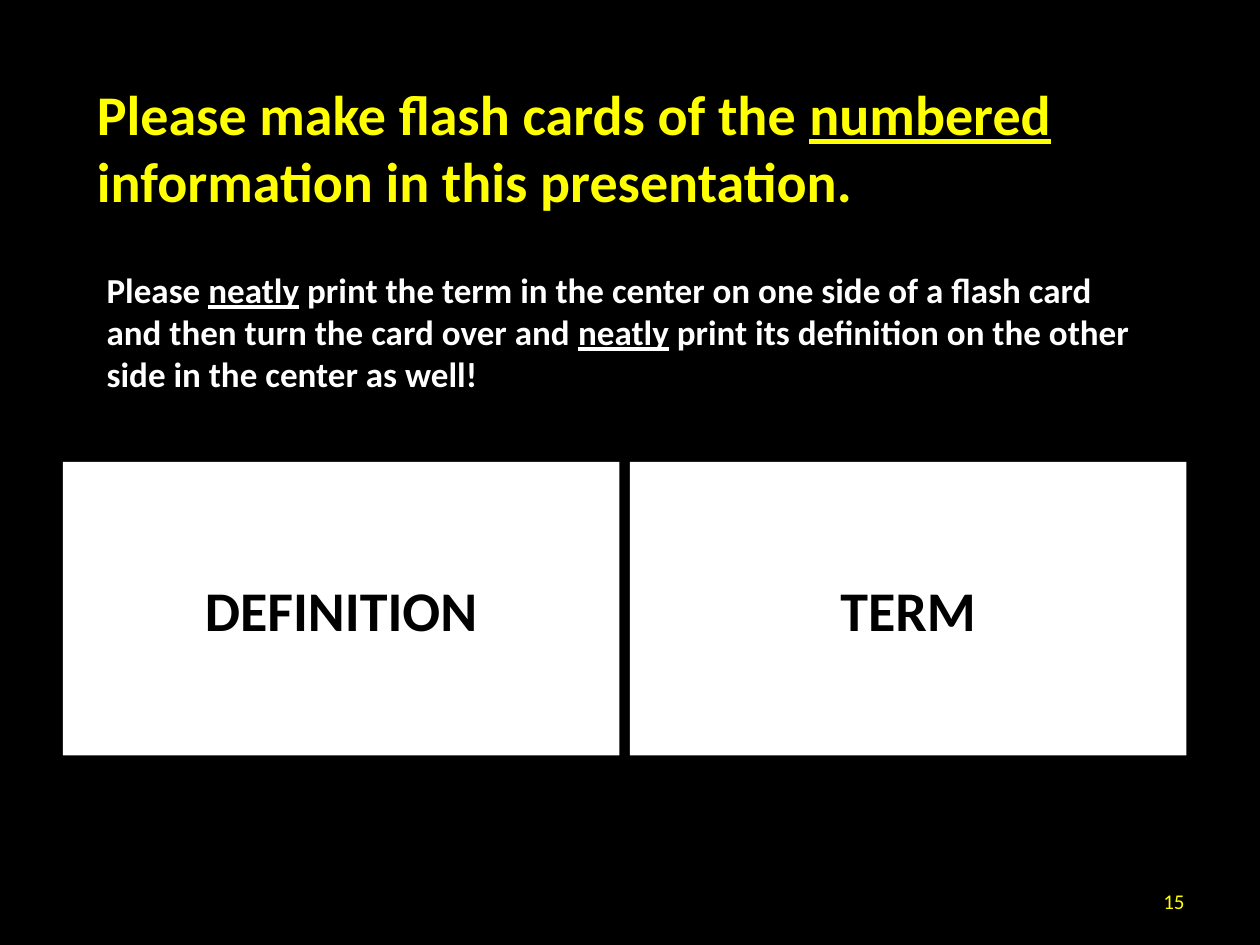
import pptx
import pptx.util
import pptx.dml.color
import pptx.enum.shapes
import pptx.enum.text

Cm, Pt = pptx.util.Cm, pptx.util.Pt
ALIGN, ANCHOR = pptx.enum.text.PP_ALIGN, pptx.enum.text.MSO_ANCHOR

COLORS = {"back": "000000", "head": "FFFF00", "body": "FFFFFF",
          "card": "FFFFFF", "ink": "000000"}

# Each run is (text, underlined).
TITLE = [("Please make flash cards of the ", False), ("numbered ", True),
         ("information in this presentation.", False)]
BODY = [("Please ", False), ("neatly", True),
        (" print the term in the center on one side of a flash card"
         " and then turn the card over and ", False),
        ("neatly", True),
        (" print its definition on the other side in the center as well!", False)]
CARDS = ["DEFINITION", "TERM"]
NUMBER = "15"

CARD_LEFT, CARD_TOP, CARD_WIDTH, CARD_HEIGHT, CARD_GAP = 1.27, 9.31, 11.22, 5.92, 0.21


def color(name):
    return pptx.dml.color.RGBColor.from_string(COLORS[name])


def write(shape, runs, size, tint, bold=True, align=ALIGN.LEFT, anchor=ANCHOR.TOP):
    frame = shape.text_frame
    frame.word_wrap = True
    frame.auto_size = pptx.enum.text.MSO_AUTO_SIZE.NONE
    frame.vertical_anchor = anchor
    para = frame.paragraphs[0]
    para.alignment = align
    font = para.font
    font.name, font.size, font.bold = "Calibri", Pt(size), bold
    font.color.rgb = color(tint)
    for text, under in runs:
        run = para.add_run()
        run.text = text
        if under:
            run.font.underline = True


def main():
    deck = pptx.Presentation()
    deck.slide_width, deck.slide_height = Cm(25.4), Cm(19.05)
    slide = deck.slides.add_slide(deck.slide_layouts[5])
    slide.background.fill.solid()
    slide.background.fill.fore_color.rgb = color("back")
    shapes = slide.shapes

    title = shapes.title
    title.left, title.top = Cm(1.7), Cm(1.48)
    title.width, title.height = Cm(22.86), Cm(3)
    write(title, TITLE, 32, "head")

    body = shapes.add_textbox(Cm(1.9), Cm(5.29), Cm(21.38), Cm(2.82))
    write(body, BODY, 20, "body")

    for i, label in enumerate(CARDS):
        left = CARD_LEFT + i * (CARD_WIDTH + CARD_GAP)
        card = shapes.add_shape(pptx.enum.shapes.MSO_SHAPE.RECTANGLE, Cm(left),
                                Cm(CARD_TOP), Cm(CARD_WIDTH), Cm(CARD_HEIGHT))
        card.shadow.inherit = False
        card.fill.solid()
        card.fill.fore_color.rgb = color("card")
        card.line.fill.background()
        write(card, [(label, False)], 32, "ink", align=ALIGN.CENTER, anchor=ANCHOR.MIDDLE)

    number = shapes.add_textbox(Cm(18.2), Cm(17.66), Cm(5.93), Cm(1.01))
    write(number, [(NUMBER, False)], 12, "head", bold=False,
          align=ALIGN.RIGHT, anchor=ANCHOR.MIDDLE)

    deck.save("out.pptx")


if __name__ == "__main__":
    main()
